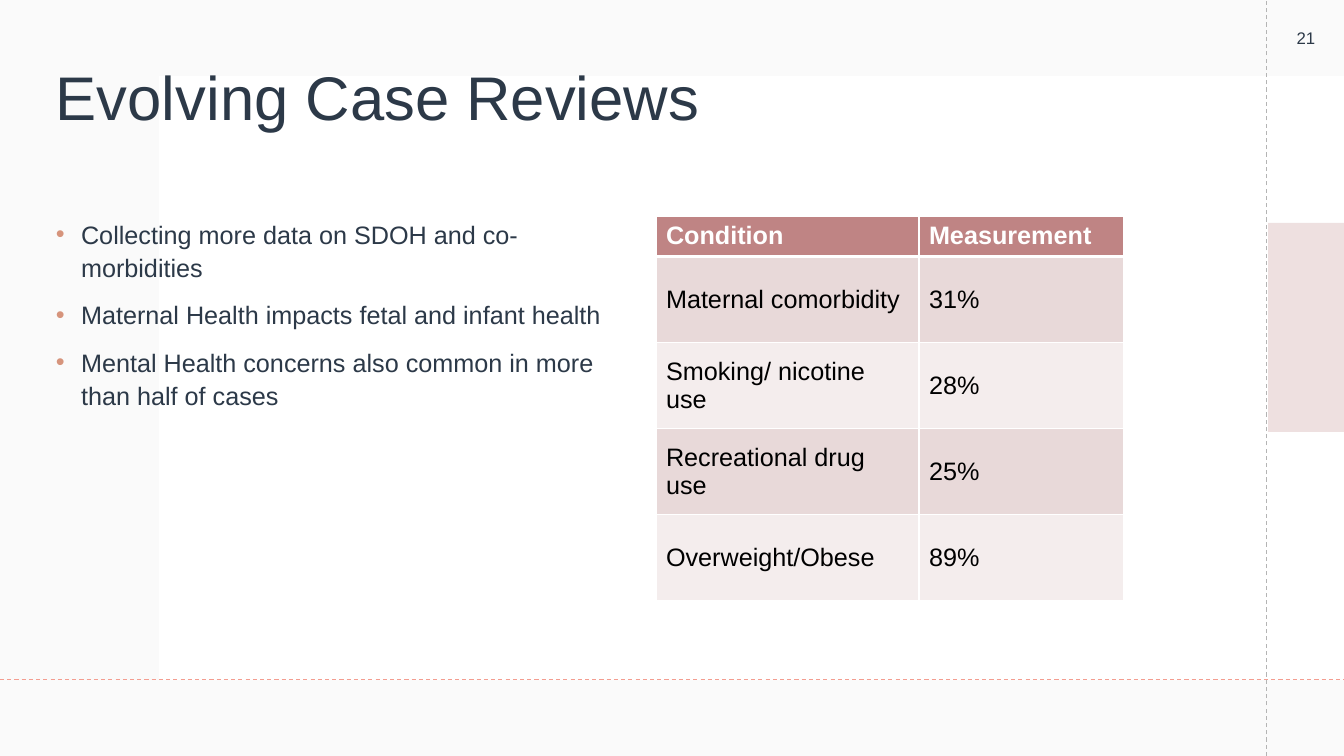
import pptx
import pptx.util
import pptx.dml.color
import pptx.enum.dml
import pptx.enum.shapes
import pptx.enum.text
import pptx.oxml.ns
from lxml import etree

COLORS = {
    "white": "FFFFFF", "black": "000000", "ink": "2C3948", "margin": "F4F4F4",
    "rose": "BF8484", "band": "E8D9D9", "light": "F4EDED",
    "coral": "F49D90", "grey": "B4B4B4", "bullet": "D6947C",
}
BULLETS = [
    "Collecting more data on SDOH and co-morbidities",
    "Maternal Health impacts fetal and infant health",
    "Mental Health concerns also common in more than half of cases",
]
CONDITIONS = [
    ("Condition", "Measurement"),
    ("Maternal comorbidity", "31%"),
    ("Smoking/ nicotine use", "28%"),
    ("Recreational drug use", "25%"),
    ("Overweight/Obese", "89%"),
]


def px(n):
    return pptx.util.Emu(round(n * 914400 / 100.8))


def rgb(name):
    return pptx.dml.color.RGBColor.from_string(COLORS[name])


def sub(parent, tag, **attrs):
    return etree.SubElement(parent, pptx.oxml.ns.qn(tag), attrs)


class Deck:
    """Draws styled elements on the current slide, measured in px."""

    def __init__(self, width, height, font):
        self.prs = pptx.Presentation()
        self.prs.slide_width, self.prs.slide_height = px(width), px(height)
        self.font = font
        self.s = self.prs.slides.add_slide(self.prs.slide_layouts[6])

    def style(self, p, size, color, bold=False):
        p.font.name, p.font.size = self.font, pptx.util.Pt(size)
        p.font.color.rgb, p.font.bold = rgb(color), bold

    def rect(self, x, y, w, h, color, opacity=100):
        sp = self.s.shapes.add_shape(
            pptx.enum.shapes.MSO_SHAPE.RECTANGLE, px(x), px(y), px(w), px(h))
        sp.shadow.inherit = False
        sp.fill.solid()
        sp.fill.fore_color.rgb = rgb(color)
        sp.line.fill.background()
        if opacity < 100:
            clr = sp.fill._xPr.find(".//" + pptx.oxml.ns.qn("a:srgbClr"))
            sub(clr, "a:alpha", val=str(opacity * 1000))

    def dashed(self, x1, y1, x2, y2, color):
        c = self.s.shapes.add_connector(
            pptx.enum.shapes.MSO_CONNECTOR.STRAIGHT, px(x1), px(y1), px(x2), px(y2))
        c.line.color.rgb = rgb(color)
        c.line.width = pptx.util.Pt(0.75)
        c.line.dash_style = pptx.enum.dml.MSO_LINE.DASH
        sub(c._element.spPr, "a:effectLst")

    def text(self, x, y, w, h, lines, size, middle=True, centered=False,
             spacing=None, bullets=False):
        tf = self.s.shapes.add_textbox(px(x), px(y), px(w), px(h)).text_frame
        tf.word_wrap = True
        if middle:
            tf.vertical_anchor = pptx.enum.text.MSO_ANCHOR.MIDDLE
        else:
            tf.margin_top = tf.margin_bottom = 0
        for i, line in enumerate(lines):
            p = tf.add_paragraph() if i else tf.paragraphs[0]
            p.text = line
            if spacing:
                p.line_spacing = spacing
            if i:
                p.space_before = pptx.util.Pt(10)
            if centered:
                p.alignment = pptx.enum.text.PP_ALIGN.CENTER
            if bullets:
                self.bullet(p)
            self.style(p, size, "ink")

    def bullet(self, p):
        pPr = p._p.get_or_add_pPr()
        pPr.set("marL", "228600")
        pPr.set("indent", "-228600")
        sub(sub(pPr, "a:buClr"), "a:srgbClr", val=COLORS["bullet"])
        sub(pPr, "a:buFont", typeface=self.font)
        sub(pPr, "a:buChar", char="•")

    def borders(self, cell, bottom):
        tcPr = cell._tc.get_or_add_tcPr()
        for i, (side, points) in enumerate(zip("LRTB", (1, 1, 1, bottom))):
            ln = etree.Element(pptx.oxml.ns.qn("a:ln" + side), w=str(points * 12700))
            sub(sub(ln, "a:solidFill"), "a:srgbClr", val=COLORS["white"])
            tcPr.insert(i, ln)

    def table(self, x, y, widths, heights, rows, size):
        tbl = self.s.shapes.add_table(
            len(rows), len(widths), px(x), px(y), px(sum(widths)), px(sum(heights))).table
        for col, w in zip(tbl.columns, widths):
            col.width = px(w)
        for i, values in enumerate(rows):
            tbl.rows[i].height = px(heights[i])
            header = i == 0
            fill = "rose" if header else "band" if i % 2 else "light"
            for j, value in enumerate(values):
                cell = tbl.cell(i, j)
                cell.text = value
                cell.vertical_anchor = pptx.enum.text.MSO_ANCHOR.MIDDLE
                cell.fill.solid()
                cell.fill.fore_color.rgb = rgb(fill)
                self.style(cell.text_frame.paragraphs[0], size,
                           "white" if header else "black", header)
                self.borders(cell, 3 if header else 1)


def main():
    deck = Deck(1344, 756, "Arial")
    deck.rect(0, 0, 1344, 756, "margin", 45)
    deck.rect(159, 76, 1185, 604, "white")
    deck.dashed(1267, 756, 1267, 0, "grey")
    deck.dashed(0, 680, 1344, 680, "coral")
    deck.rect(1268, 223, 76, 209, "rose", 25)
    deck.text(46, 40, 1220, 146, ["Evolving Case Reviews"], 44,
              spacing=pptx.util.Pt(28))
    deck.text(46, 216, 571, 413, BULLETS, 18, middle=False, spacing=1.1, bullets=True)
    deck.table(656, 216, [263, 205], [39] + [86] * 4, CONDITIONS, 18)
    deck.text(1268, 0, 76, 76, ["21"], 12, centered=True)
    deck.prs.save("out.pptx")


if __name__ == "__main__":
    main()
